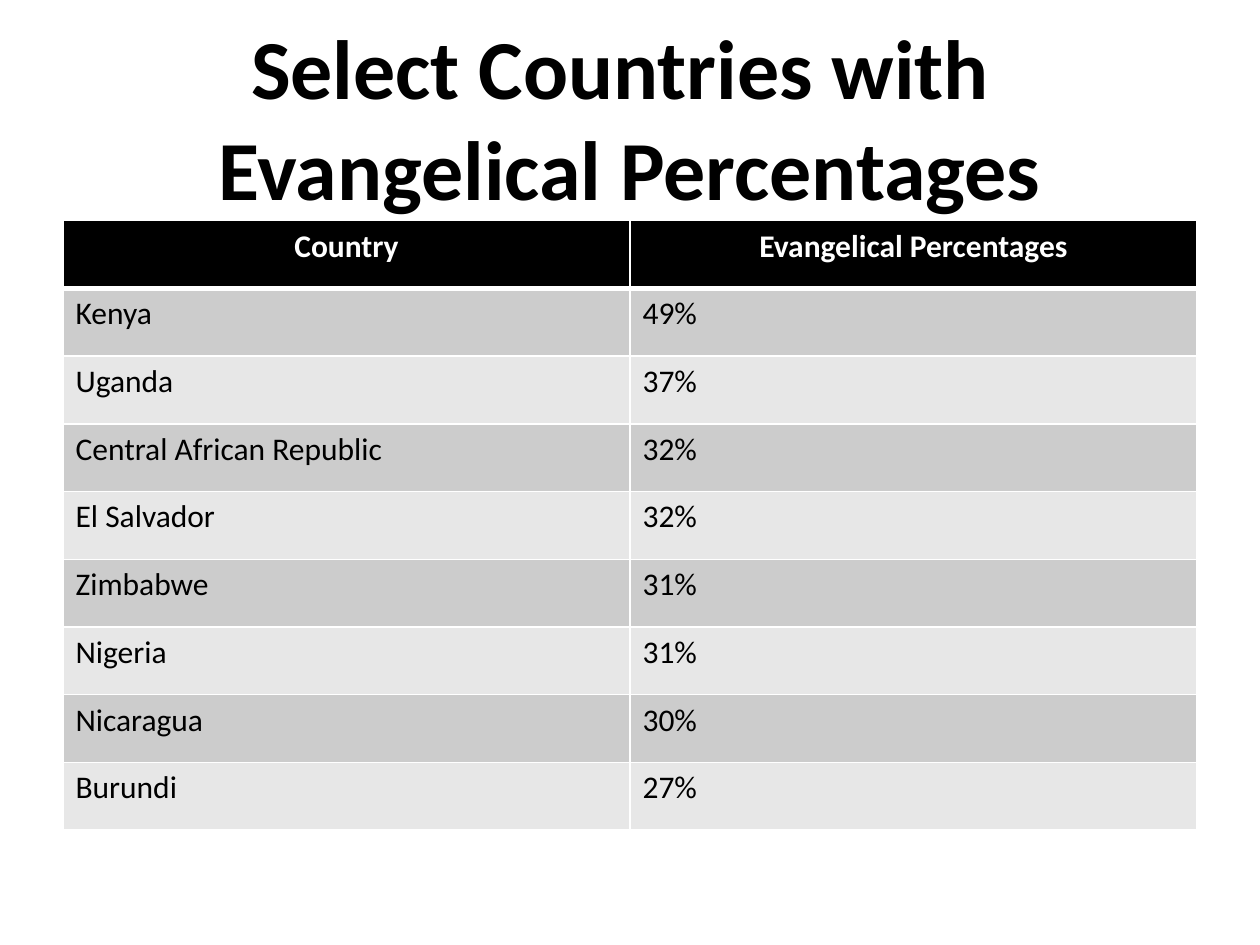
"""Build a slide with a table of evangelical percentages by country."""
from lxml.etree import SubElement
from pptx import Presentation
from pptx.dml.color import RGBColor
from pptx.enum.text import MSO_ANCHOR, PP_ALIGN
from pptx.oxml.ns import qn
from pptx.util import Cm, Pt

COLORS = {"black": "000000", "white": "FFFFFF", "dark": "CCCCCC", "light": "E7E7E7"}
ROWS = [
    ("Country", "Evangelical Percentages"),
    ("Kenya", "49%"),
    ("Uganda", "37%"),
    ("Central African Republic", "32%"),
    ("El Salvador", "32%"),
    ("Zimbabwe", "31%"),
    ("Nigeria", "31%"),
    ("Nicaragua", "30%"),
    ("Burundi", "27%"),
]


def style_font(para, size, color, bold):
    para.font.name = "Calibri"
    para.font.size = Pt(size)
    para.font.bold = bold
    para.font.color.rgb = RGBColor.from_string(COLORS[color])


def add_border(cell, side, width):
    line = SubElement(cell._tc.get_or_add_tcPr(), qn(f"a:{side}"), w=str(Pt(width)))
    fill = SubElement(line, qn("a:solidFill"))
    SubElement(fill, qn("a:srgbClr"), val=COLORS["white"])


deck = Presentation()
deck.slide_width, deck.slide_height = Cm(25.4), Cm(19.05)
page = deck.slides.add_slide(deck.slide_layouts[5])

title = page.shapes.title
title.left, title.top, title.width, title.height = Cm(1.27), Cm(0.76), Cm(22.86), Cm(3.18)
title.text_frame.text = "Select Countries with \vEvangelical Percentages"
title.text_frame.vertical_anchor = MSO_ANCHOR.MIDDLE
heading = title.text_frame.paragraphs[0]
heading.alignment = PP_ALIGN.CENTER
style_font(heading, 48, "black", True)

frame = page.shapes.add_table(len(ROWS), 2, Cm(1.27), Cm(4.45), Cm(22.86), Cm(12.29))
table = frame.table
for row_index, values in enumerate(ROWS):
    is_header = row_index == 0
    fill_name = "black" if is_header else "dark" if row_index % 2 else "light"
    for column_index, value in enumerate(values):
        cell = table.cell(row_index, column_index)
        cell.text = value
        para = cell.text_frame.paragraphs[0]
        para.alignment = PP_ALIGN.CENTER if is_header else PP_ALIGN.LEFT
        style_font(para, 18, "white" if is_header else "black", is_header)
        for side in ("lnL", "lnR", "lnT", "lnB"):
            is_thick = (row_index, side) in ((0, "lnB"), (1, "lnT"))
            add_border(cell, side, 3 if is_thick else 1)
        cell.fill.solid()
        cell.fill.fore_color.rgb = RGBColor.from_string(COLORS[fill_name])

deck.save("out.pptx")
